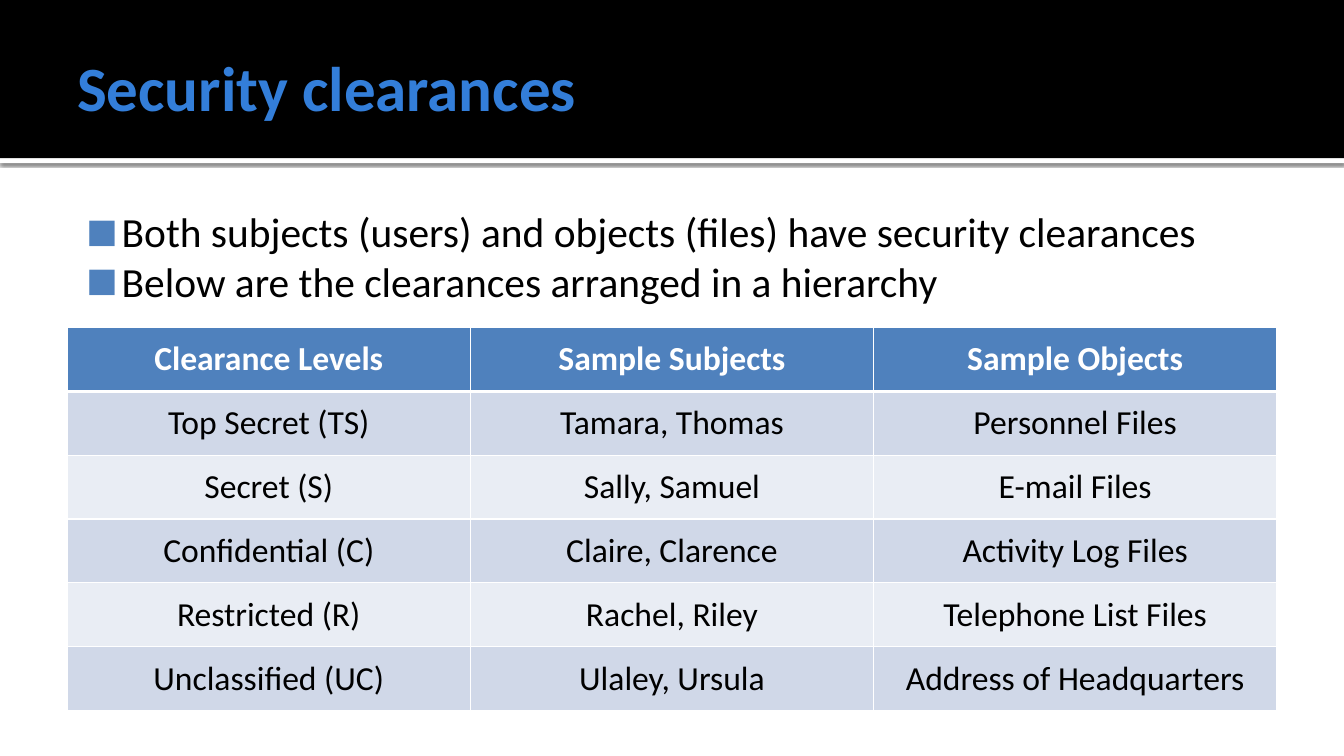
from dataclasses import dataclass

from lxml import etree
from pptx import Presentation
from pptx.dml.color import RGBColor
from pptx.enum import shapes, text
from pptx.oxml import ns
from pptx.util import Pt


@dataclass(frozen=True)
class Theme:
    font: str = "Calibri"
    white: str = "FFFFFF"
    black: str = "000000"
    title: str = "337ED9"
    accent: str = "4F81BD"
    bands: tuple = ("D0D8E8", "E9EDF4")
    title_size: float = 45
    body_size: float = 29.6
    table_size: float = 24


THEME = Theme()
WIDTH, HEIGHT = 960, 540
LEFT, CONTENT_WIDTH = 48, 864
BANNER_HEIGHT = 113

POINTS = [
    "Both subjects (users) and objects (files) have security clearances",
    "Below are the clearances arranged in a hierarchy",
]
CLEARANCES = [
    ("Clearance Levels", "Sample Subjects", "Sample Objects"),
    ("Top Secret (TS)", "Tamara, Thomas", "Personnel Files"),
    ("Secret (S)", "Sally, Samuel", "E-mail Files"),
    ("Confidential (C)", "Claire, Clarence", "Activity Log Files"),
    ("Restricted (R)", "Rachel, Riley", "Telephone List Files"),
    ("Unclassified (UC)", "Ulaley, Ursula", "Address of Headquarters"),
]


def add_xml(parent, tag, **attributes):
    return etree.SubElement(parent, ns.qn(tag), {k: str(v) for k, v in attributes.items()})


def add_run(paragraph, words, size, color, bold=False):
    run = paragraph.add_run()
    run.text = words
    run.font.name = THEME.font
    run.font.size = Pt(size)
    run.font.bold = bold
    run.font.color.rgb = RGBColor.from_string(color)


def add_band(slide, top, height, color):
    band = slide.shapes.add_shape(
        shapes.MSO_SHAPE.RECTANGLE, Pt(0), Pt(top), Pt(WIDTH), Pt(height))
    band.shadow.inherit = False
    band.fill.solid()
    band.fill.fore_color.rgb = RGBColor.from_string(color)
    band.line.fill.background()
    return band


def add_shadow(band):
    effects = band._element.spPr.find(ns.qn("a:effectLst"))
    shadow = add_xml(effects, "a:outerShdw", blurRad=Pt(2.5), dist=Pt(0.8),
                     dir=90 * 60000, algn="tl", rotWithShape=0)
    color = add_xml(shadow, "a:srgbClr", val=THEME.black)
    add_xml(color, "a:alpha", val=60000)


def add_text_frame(slide, top, height, margins, anchor):
    box = slide.shapes.add_textbox(Pt(LEFT), Pt(top), Pt(CONTENT_WIDTH), Pt(height))
    frame = box.text_frame
    frame.word_wrap = True
    frame.vertical_anchor = anchor
    (frame.margin_left, frame.margin_top,
     frame.margin_right, frame.margin_bottom) = map(Pt, margins)
    return frame


def add_title(slide, words):
    frame = add_text_frame(slide, 12, 99, (7.2, 3.6, 3.6, 3.6), text.MSO_ANCHOR.MIDDLE)
    add_run(frame.paragraphs[0], words, THEME.title_size, THEME.title, bold=True)


def add_bullets(slide, points):
    frame = add_text_frame(slide, 140, 112, (4.3, 7.2, 7.2, 3.6), text.MSO_ANCHOR.TOP)
    for index, point in enumerate(points):
        paragraph = frame.add_paragraph() if index else frame.paragraphs[0]
        props = paragraph._p.get_or_add_pPr()
        props.set("marL", str(Pt(34.6)))
        props.set("indent", str(Pt(-25.2)))
        color = add_xml(props, "a:buClr")
        add_xml(color, "a:srgbClr", val=THEME.accent)
        add_xml(props, "a:buSzPct", val=80000)
        add_xml(props, "a:buFont", typeface=THEME.font)
        add_xml(props, "a:buChar", char="■")
        add_run(paragraph, point, THEME.body_size, THEME.black)


def set_borders(cell, bottom):
    props = cell._tc.get_or_add_tcPr()
    sides = (("a:lnL", 1), ("a:lnR", 1), ("a:lnT", 1), ("a:lnB", bottom))
    for position, (side, width) in enumerate(sides):
        line = etree.Element(ns.qn(side), {"w": str(Pt(width))})
        fill = add_xml(line, "a:solidFill")
        add_xml(fill, "a:srgbClr", val=THEME.white)
        props.insert(position, line)


def add_clearance_table(slide, rows):
    row_height = 45.6
    table = slide.shapes.add_table(
        len(rows), len(rows[0]), Pt(LEFT), Pt(234),
        Pt(CONTENT_WIDTH), Pt(row_height * len(rows))).table
    for row in table.rows:
        row.height = Pt(row_height)
    for r, entries in enumerate(rows):
        header = r == 0
        fill = THEME.accent if header else THEME.bands[(r - 1) % 2]
        for c, entry in enumerate(entries):
            cell = table.cell(r, c)
            cell.vertical_anchor = text.MSO_ANCHOR.MIDDLE
            cell.fill.solid()
            cell.fill.fore_color.rgb = RGBColor.from_string(fill)
            set_borders(cell, bottom=3 if header else 1)
            paragraph = cell.text_frame.paragraphs[0]
            paragraph.alignment = text.PP_ALIGN.CENTER
            add_run(paragraph, entry, THEME.table_size,
                    THEME.white if header else THEME.black, bold=header)


def main():
    deck = Presentation()
    deck.slide_width, deck.slide_height = Pt(WIDTH), Pt(HEIGHT)
    slide = deck.slides.add_slide(deck.slide_layouts[6])

    # Banner with a shadowed rule below it
    rule = add_band(slide, BANNER_HEIGHT, 3.6, THEME.white)
    add_shadow(rule)
    add_band(slide, 0, BANNER_HEIGHT, THEME.black)
    add_title(slide, "Security clearances")

    # Introductory points
    add_bullets(slide, POINTS)

    # Clearance hierarchy
    add_clearance_table(slide, CLEARANCES)

    deck.save("out.pptx")


if __name__ == "__main__":
    main()
